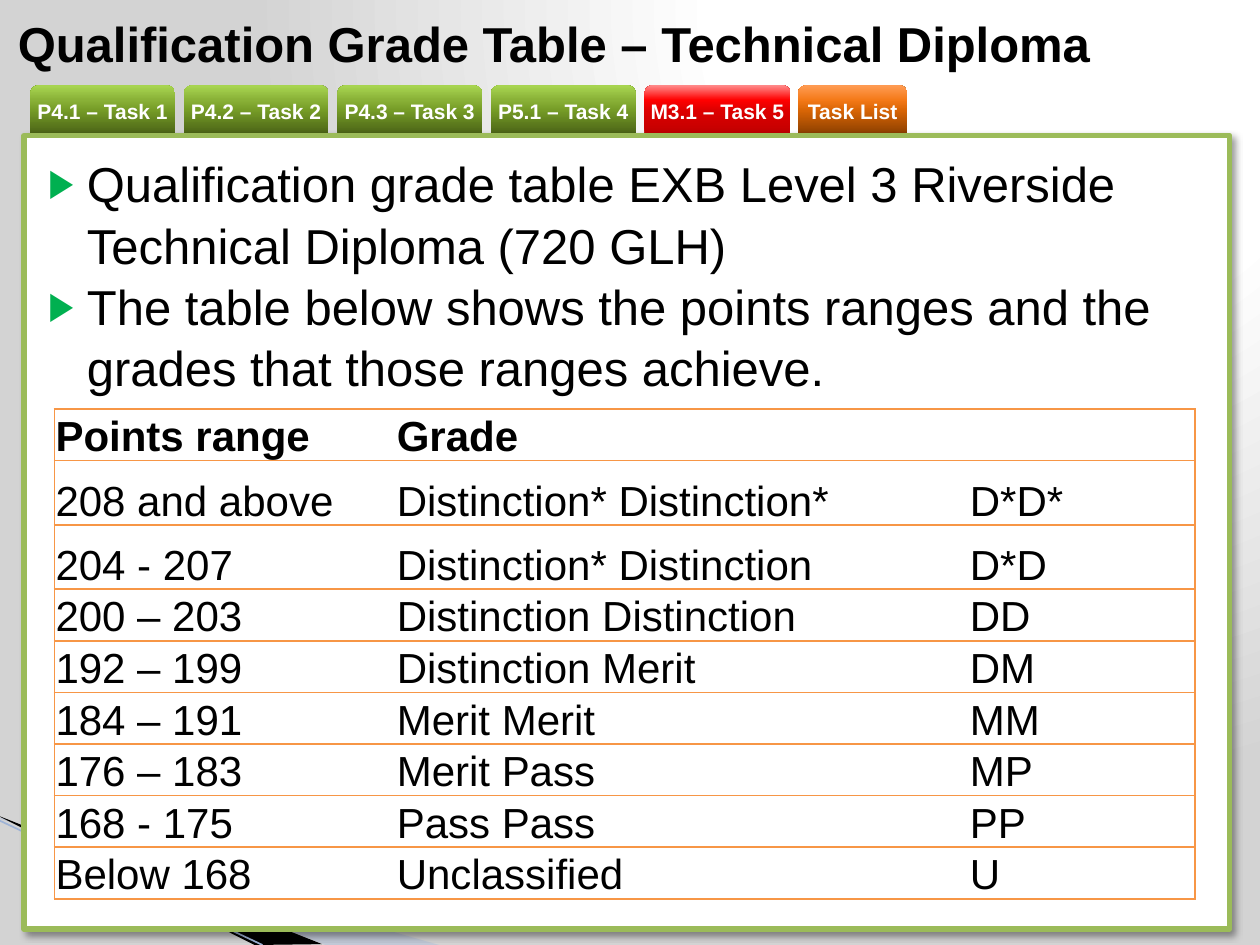
"""Build the qualification grade table slide for the Technical Diploma."""
from lxml import etree
from pptx import Presentation, util as u
from pptx.dml.color import RGBColor
from pptx.enum import shapes, text
from pptx.oxml import parse_xml
from pptx.oxml.ns import qn

Pt = u.Pt
NS = 'xmlns:a="http://schemas.openxmlformats.org/drawingml/2006/main"'
BLACK, WHITE = RGBColor(0, 0, 0), RGBColor(255, 255, 255)
PANEL_GREEN = RGBColor(0x9B, 0xBB, 0x59)
BULLET_GREEN = RGBColor(0x00, 0xB0, 0x50)
BORDER_ORANGE = RGBColor(0xF7, 0x96, 0x46)
WING_BLUE, EDGE_BLUE = RGBColor(0xA7, 0xB9, 0xDB), RGBColor(0x9E, 0xB3, 0xD6)
BACKDROP = [(0, WHITE), (40, WHITE), (100, RGBColor(0xD3, 0xD3, 0xD3))]


def ramp(*colours):
    return list(zip((0, 50, 70, 100), map(RGBColor.from_string, colours)))


GREEN = ramp("4A6316", "769C27", "89B137", "A9D651")
RED = ramp("C00000", "DE0000", "FF0000", "FF8B8B")
ORANGE = ramp("8B3F00", "DA6606", "F47917", "FF9C54")

TITLE = "Qualification Grade Table – Technical Diploma"
TABS = [
    ("P4.1 – Task 1", GREEN, 82.8),
    ("P4.2 – Task 2", GREEN, 82.8),
    ("P4.3 – Task 3", GREEN, 82.8),
    ("P5.1 – Task 4", GREEN, 82.8),
    ("M3.1 – Task 5", RED, 83.5),
    ("Task List", ORANGE, 62.6),
]
POINTS = [
    "Qualification grade table EXB Level 3 Riverside Technical Diploma (720 GLH)",
    "The table below shows the points ranges and the grades that those ranges achieve.",
]
GRADES = [
    ("Points range", "Grade", ""),
    ("208 and above", "Distinction* Distinction*", "D*D*"),
    ("204 - 207", "Distinction* Distinction", "D*D"),
    ("200 – 203", "Distinction Distinction", "DD"),
    ("192 – 199", "Distinction Merit", "DM"),
    ("184 – 191", "Merit Merit", "MM"),
    ("176 – 183", "Merit Pass", "MP"),
    ("168 - 175", "Pass Pass", "PP"),
    ("Below 168", "Unclassified", "U"),
]
COLUMN_WIDTHS = (195, 327.5, 129.5)
ROW_HEIGHT, TALL_ROW_HEIGHT, TALL_ROWS = 29.5, 36.75, (1, 2)
WINGS = [
    ([(0, 468), (251, 540), (186, 540), (0, 467)], WING_BLUE, 40),
    ([(0, 466.5), (184, 539.5), (145.5, 540), (0.5, 467)], BLACK, 100),
]


def gradient(stops, direction):
    listed = "".join(
        f'<a:gs pos="{at * 1000}"><a:srgbClr val="{colour}"/></a:gs>' for at, colour in stops)
    return parse_xml(f'<a:gradFill {NS} rotWithShape="1"><a:gsLst>{listed}</a:gsLst>{direction}</a:gradFill>')


def write(paragraph, words, size, colour=BLACK, bold=False):
    run = paragraph.add_run()
    run.text = words
    run.font.name, run.font.size, run.font.bold = "Arial", Pt(size), bold
    run.font.color.rgb = colour


def place(part, left, top, width, height):
    part.left, part.top, part.width, part.height = map(Pt, (left, top, width, height))


def add_backdrop(slide):
    slide.background.fill.solid()
    solid = slide.background._cSld.bg.bgPr.find(qn("a:solidFill"))
    focus = '<a:path path="circle"><a:fillToRect l="65000" b="98000"/></a:path>'
    solid.getparent().replace(solid, gradient(BACKDROP, focus))


def add_wings(slide):
    for corners, colour, opacity in WINGS:
        (x, y), *rest = [(Pt(a), Pt(b)) for a, b in corners]
        outline = slide.shapes.build_freeform(x, y)
        outline.add_line_segments(rest, close=True)
        wing = outline.convert_to_shape()
        wing.shadow.inherit = False
        wing.line.fill.background()
        wing.fill.solid()
        wing.fill.fore_color.rgb = colour
        if opacity < 100:
            tint = wing._element.spPr.find(".//" + qn("a:srgbClr"))
            etree.SubElement(tint, qn("a:alpha"), val=str(opacity * 1000))
    edge = slide.shapes.add_connector(
        shapes.MSO_CONNECTOR.STRAIGHT, Pt(0), Pt(469), Pt(150), Pt(540))
    edge.line.color.rgb, edge.line.width = EDGE_BLUE, Pt(0.95)
    etree.SubElement(edge._element.spPr, qn("a:effectLst"))


def add_tabs(slide):
    for index, (label, stops, width) in enumerate(TABS):
        tab = slide.shapes.add_shape(
            shapes.MSO_SHAPE.ROUND_2_SAME_RECTANGLE,
            Pt(17.25 + 87.75 * index), Pt(48.75), Pt(width), Pt(28))
        tab.shadow.inherit = False
        tab.line.fill.background()
        tab._element.spPr.find(qn("a:prstGeom")).addnext(gradient(stops, '<a:lin ang="16200000"/>'))
        frame = tab.text_frame
        frame.margin_left = frame.margin_right = frame.margin_top = frame.margin_bottom = 0
        frame.vertical_anchor = text.MSO_ANCHOR.MIDDLE
        frame.paragraphs[0].alignment = text.PP_ALIGN.CENTER
        write(frame.paragraphs[0], label, 12, WHITE, True)


def add_panel(slide):
    panel = slide.shapes.add_shape(
        shapes.MSO_SHAPE.RECTANGLE, Pt(13.75), Pt(77.5), Pt(689), Pt(453.5))
    panel.fill.solid()
    panel.fill.fore_color.rgb = WHITE
    panel.line.color.rgb, panel.line.width = PANEL_GREEN, Pt(3)
    panel._element.spPr.append(parse_xml(
        f'<a:effectLst {NS}><a:outerShdw blurRad="{Pt(4)}" dist="{Pt(3)}" dir="2700000" algn="tl" '
        'rotWithShape="0"><a:srgbClr val="000000"><a:alpha val="40000"/></a:srgbClr></a:outerShdw></a:effectLst>'))


def fill_title(title):
    place(title, 3, 0, 692, 49)
    frame = title.text_frame
    frame.auto_size = text.MSO_AUTO_SIZE.NONE
    frame.vertical_anchor = text.MSO_ANCHOR.MIDDLE
    frame.paragraphs[0].alignment = text.PP_ALIGN.LEFT
    write(frame.paragraphs[0], TITLE, 28, bold=True)


def fill_points(body):
    place(body, 20.25, 83, 674.75, 143.25)
    frame = body.text_frame
    frame.auto_size = text.MSO_AUTO_SIZE.NONE
    for index, words in enumerate(POINTS):
        point = frame.add_paragraph() if index else frame.paragraphs[0]
        point.space_before = Pt(0)
        point.line_spacing = 1.04
        layout = point._p.get_or_add_pPr()
        layout.set("marL", str(Pt(22.25)))
        layout.set("indent", str(-Pt(22.25)))
        colour = etree.SubElement(layout, qn("a:buClr"))
        etree.SubElement(colour, qn("a:srgbClr"), val=str(BULLET_GREEN))
        etree.SubElement(layout, qn("a:buSzPct"), val="80000")
        etree.SubElement(layout, qn("a:buFont"), typeface="Arial")
        etree.SubElement(layout, qn("a:buChar"), char="▶")
        write(point, words, 28)


def set_borders(cell, sides):
    properties = cell._tc.get_or_add_tcPr()
    for position, side in enumerate(("L", "R", "T", "B")):
        paint = (f'<a:solidFill><a:srgbClr val="{BORDER_ORANGE}"/></a:solidFill>'
                 if side in sides else "<a:noFill/>")
        properties.insert(position, parse_xml(f'<a:ln{side} {NS} w="{Pt(1)}">{paint}</a:ln{side}>'))


def add_grades(slide):
    heights = [TALL_ROW_HEIGHT if i in TALL_ROWS else ROW_HEIGHT for i in range(len(GRADES))]
    grades = slide.shapes.add_table(
        len(GRADES), len(COLUMN_WIDTHS), Pt(31), Pt(233.75),
        Pt(sum(COLUMN_WIDTHS)), Pt(sum(heights))).table
    for column, width in zip(grades.columns, COLUMN_WIDTHS):
        column.width = Pt(width)
    for r, (entries, height) in enumerate(zip(GRADES, heights)):
        grades.rows[r].height = Pt(height)
        for c, words in enumerate(entries):
            cell = grades.cell(r, c)
            cell.margin_left = cell.margin_right = cell.margin_top = Pt(0.75)
            cell.margin_bottom = 0
            cell.vertical_anchor = text.MSO_ANCHOR.BOTTOM
            cell.fill.solid()
            cell.fill.fore_color.rgb = WHITE
            set_borders(cell, ("LTB", "TB", "RTB")[c])
            if words:
                write(cell.text_frame.paragraphs[0], words, 24, bold=r == 0)


def main():
    deck = Presentation()
    deck.slide_width, deck.slide_height = Pt(720), Pt(540)
    slide = deck.slides.add_slide(deck.slide_layouts[1])
    title, body = slide.placeholders
    add_backdrop(slide)
    add_wings(slide)
    add_tabs(slide)
    add_panel(slide)
    for placeholder in (title, body):
        slide.shapes._spTree.append(placeholder._element)
    fill_title(title)
    fill_points(body)
    add_grades(slide)
    deck.save("out.pptx")


if __name__ == "__main__":
    main()
